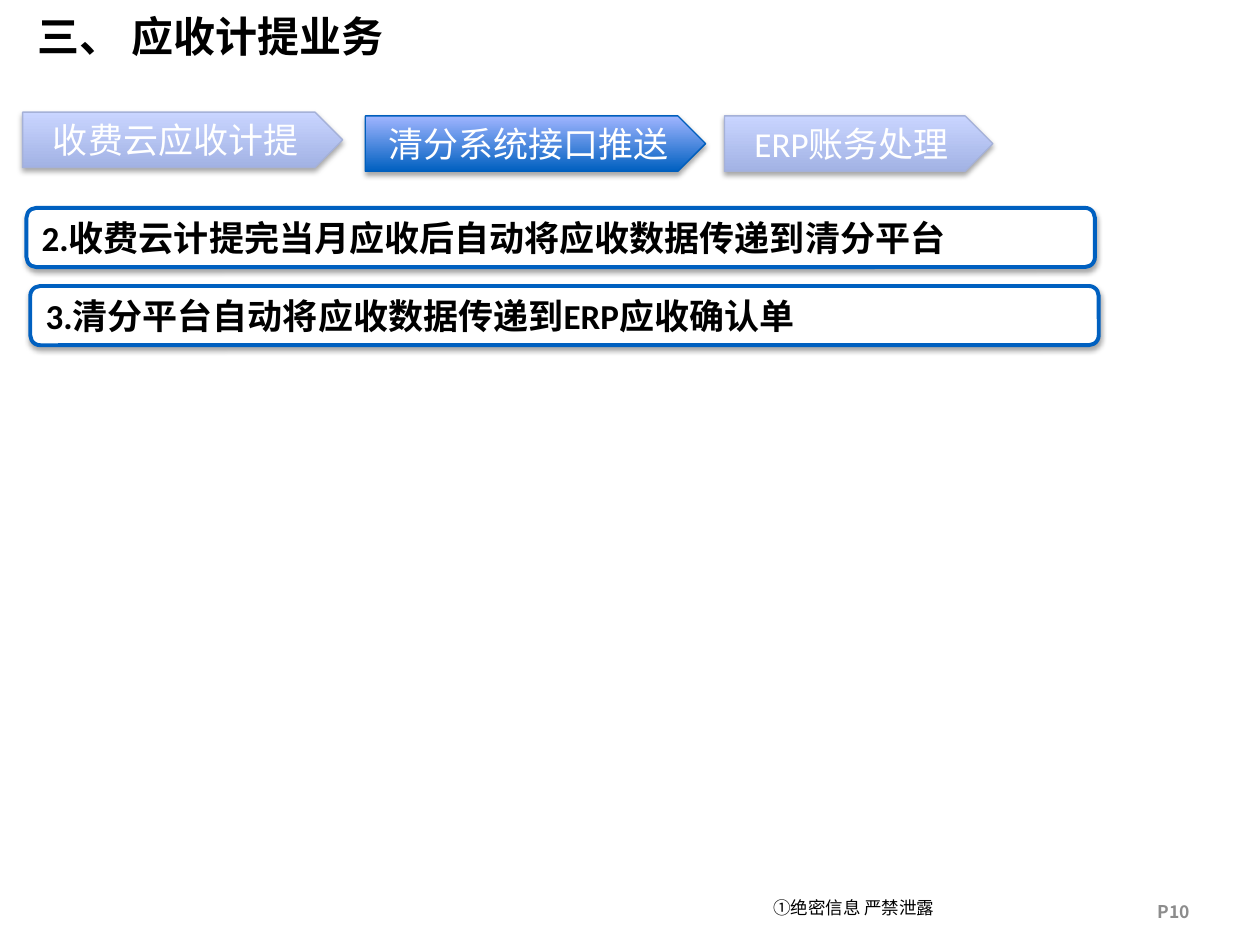
from lxml import etree
from pptx import Presentation
from pptx import util as u
from pptx.dml.color import RGBColor
from pptx.enum import shapes, text
from pptx.oxml.ns import qn

WIDE, HIGH = u.Inches(10), u.Inches(7.5)
CJK, LATIN = "Noto Sans CJK SC", "Calibri"
HUES = {
    "ink": "000000", "paper": "FFFFFF", "page": "8C8C8C",
    "frame": "0060C0",
    "on_low": "0060C0", "on_high": "A0B5FF", "on_edge": "005EBC",
    "off_low": "A2B2E4", "off_high": "C9D5FF", "off_edge": "A5B1D8",
}


def hue(name):
    return RGBColor.from_string(HUES[name])


def area(left, top, width, height):
    """Turn percentages of the slide's size into lengths."""
    return (int(WIDE * left / 100), int(HIGH * top / 100),
            int(WIDE * width / 100), int(HIGH * height / 100))


def write(shape, words, size, color, face, bold=False, align="LEFT",
          anchor="MIDDLE", wrap=True):
    frame = shape.text_frame
    frame.word_wrap = wrap
    frame.vertical_anchor = getattr(text.MSO_ANCHOR, anchor)
    para = frame.paragraphs[0]
    para.text = words
    para.alignment = getattr(text.PP_ALIGN, align)
    font = para.font
    font.size, font.bold, font.name = u.Pt(size), bold, face
    font.color.rgb = hue(color)
    props = para._p.pPr.find(qn("a:defRPr"))
    etree.SubElement(props, qn("a:ea"), typeface=CJK)


def label(slide, box, words, size, color, **style):
    shape = slide.shapes.add_textbox(*area(*box))
    write(shape, words, size, color, CJK, **style)


def shade(shape):
    """Add a soft shadow straight below the shape."""
    shape.shadow.inherit = False
    effects = shape._element.spPr.find(qn("a:effectLst"))
    outer = etree.SubElement(
        effects, qn("a:outerShdw"), blurRad=str(u.Pt(3.1)),
        dist=str(u.Pt(1.8)), dir="5400000", rotWithShape="0")
    color = etree.SubElement(outer, qn("a:srgbClr"), val=HUES["ink"])
    etree.SubElement(color, qn("a:alpha"), val="35000")


def block(slide, kind, box, edge, weight):
    shape = slide.shapes.add_shape(kind, *area(*box))
    shape.line.color.rgb = hue(edge)
    shape.line.width = u.Pt(weight)
    shade(shape)
    return shape


def step(slide, left, top, width, words, state):
    """Draw one arrow of the process; state is "on" or "off"."""
    shape = block(slide, shapes.MSO_SHAPE.PENTAGON,
                  (left, top, width, 5.87), state + "_edge", 0.75)
    shape.fill.gradient()
    shape.fill.gradient_angle = 90
    for stop, end in zip(shape.fill.gradient_stops, ("_low", "_high")):
        stop.color.rgb = hue(state + end)
    write(shape, words, 20, "paper", LATIN, align="CENTER")


def note(slide, left, top, words):
    shape = block(slide, shapes.MSO_SHAPE.ROUNDED_RECTANGLE,
                  (left, top, 84.8, 6.27), "frame", 2.25)
    shape.fill.solid()
    shape.fill.fore_color.rgb = hue("paper")
    write(shape, words, 20, "ink", LATIN, bold=True)


def main():
    deck = Presentation()
    deck.slide_width, deck.slide_height = WIDE, HIGH
    slide = deck.slides.add_slide(deck.slide_layouts[6])

    label(slide, (60.4, 94.27, 15.3, 3.6), "①绝密信息 严禁泄露", 10, "ink",
          anchor="TOP", wrap=False)
    label(slide, (90.9, 94.67, 9.1, 3.6), "P10", 10, "page",
          bold=True, anchor="TOP")
    label(slide, (2, -1.33, 77.7, 10.13), "三、 应收计提业务", 24, "ink",
          bold=True)

    step(slide, 1.8, 11.87, 25.4, "收费云应收计提", "off")
    step(slide, 29, 12.27, 27, "清分系统接口推送", "on")
    step(slide, 57.5, 12.27, 21.3, "ERP账务处理", "off")

    note(slide, 2.1, 22, "2.收费云计提完当月应收后自动将应收数据传递到清分平台")
    note(slide, 2.4, 30.27, "3.清分平台自动将应收数据传递到ERP应收确认单")

    deck.save("out.pptx")


if __name__ == "__main__":
    main()
